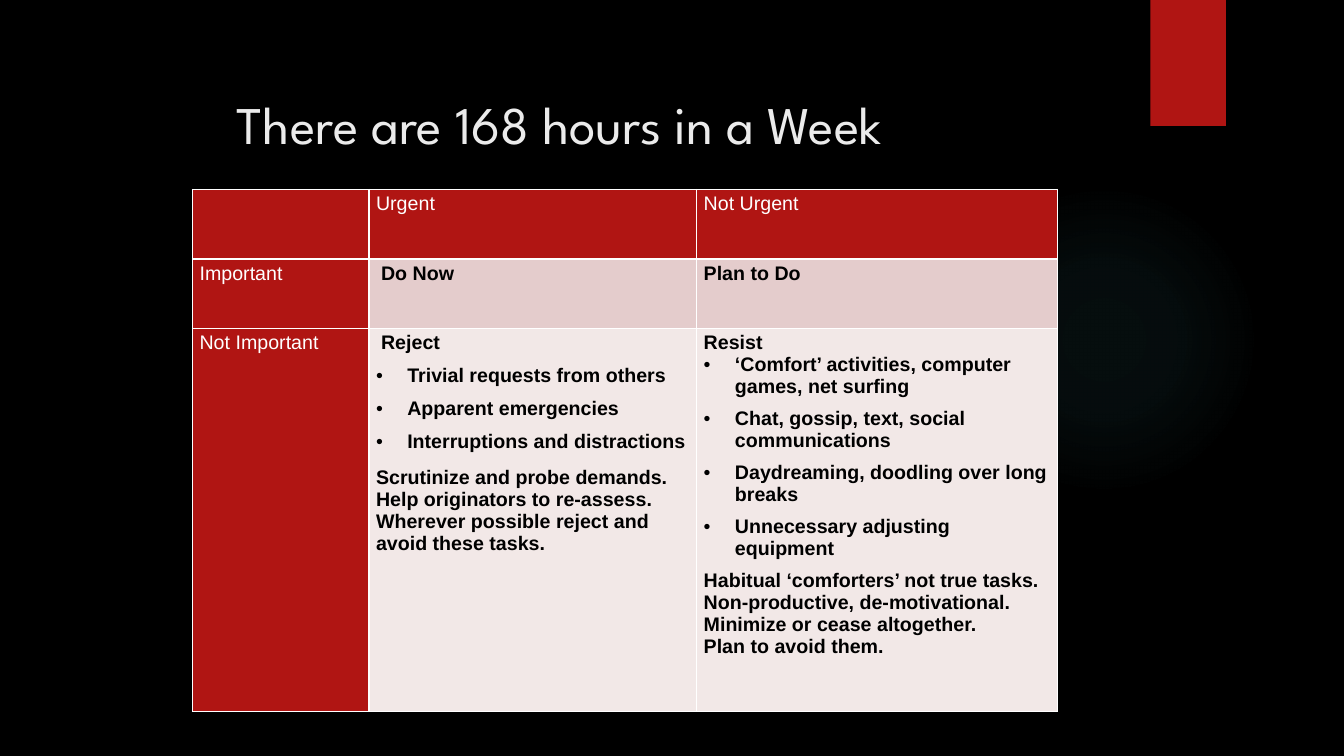
from lxml import etree
from pptx import Presentation
from pptx.dml.color import RGBColor
from pptx.enum.shapes import MSO_SHAPE
from pptx.enum.text import MSO_ANCHOR, PP_ALIGN
from pptx.oxml import parse_xml
from pptx.oxml.ns import qn
from pptx.util import Inches, Pt

OVAL, RECT = MSO_SHAPE.OVAL, MSO_SHAPE.RECTANGLE
MIDDLE, LEFT = MSO_ANCHOR.MIDDLE, PP_ALIGN.LEFT
NS = "http://schemas.openxmlformats.org/drawingml/2006/main"
COLORS = {
    "back": "000000", "red": "B01513", "glow": "50B9C1", "title": "EBEBEB",
    "white": "FFFFFF", "black": "000000", "rose": "E4CCCC", "pale": "F2E8E7",
}
GLOW = [(0, 7), (36, 6), (69, 0)]
COLS = [1.75, 3.25, 3.58]
ROWS = [0.69, 0.69, 3.8]


def plain(text, lead=1.0, gap=0, indent=0):
    return {"text": text, "lead": lead, "gap": gap, "indent": indent}


def bullet(text, lead=1.0, gap=0):
    return plain(text, lead, gap, 0.31) | {"bullet": True}


def head(text, indent=0):
    return [plain(text, 1.15, indent=indent)]


REJECT = head("Reject", 0.05) + [
    bullet("Trivial requests from others", 1.5),
    bullet("Apparent emergencies", 1.5),
    bullet("Interruptions and distractions", 1.5),
    plain("Scrutinize and probe demands. Help originators to re-assess. "
          "Wherever possible reject and avoid these tasks.", gap=10),
]
RESIST = head("Resist") + [
    bullet("‘Comfort’ activities, computer games, net surfing"),
    bullet("Chat, gossip, text, social communications", gap=7),
    bullet("Daydreaming, doodling over long breaks", gap=7),
    bullet("Unnecessary adjusting equipment", gap=7),
    plain("Habitual ‘comforters’ not true tasks. Non-productive, "
          "de-motivational. Minimize or cease altogether.", gap=7),
    plain("Plan to avoid them."),
]
GRID = [
    [[], head("Urgent"), head("Not Urgent")],
    [head("Important"), head("Do Now", 0.05), head("Plan to Do")],
    [head("Not Important"), REJECT, RESIST],
]


def color(name):
    return RGBColor.from_string(COLORS[name])


def add_block(slide, kind, left, top, width, height, fill):
    block = slide.shapes.add_shape(
        kind, Inches(left), Inches(top), Inches(width), Inches(height))
    block.shadow.inherit = False
    block.fill.solid()
    block.fill.fore_color.rgb = color(fill)
    block.line.fill.background()
    return block


def add_glow(slide):
    glow = add_block(slide, OVAL, 9.41, 1.83, 3.08, 3.08, "glow")
    stops = "".join(
        f'<a:gs pos="{pos * 1000}"><a:srgbClr val="{COLORS["glow"]}">'
        f'<a:alpha val="{alpha * 1000}"/></a:srgbClr></a:gs>'
        for pos, alpha in GLOW)
    grad = parse_xml(
        f'<a:gradFill xmlns:a="{NS}"><a:gsLst>{stops}</a:gsLst>'
        '<a:path path="circle"><a:fillToRect l="50000" t="50000" '
        'r="50000" b="50000"/></a:path></a:gradFill>')
    props = glow._element.spPr
    props.replace(props.find(qn("a:solidFill")), grad)


def set_title(slide, text):
    title = slide.shapes.title
    title.left, title.top = Inches(2.25), Inches(0.76)
    title.width, title.height = Inches(9), Inches(0.92)
    frame = title.text_frame
    frame.text = text
    frame.vertical_anchor = MIDDLE
    para = frame.paragraphs[0]
    para.alignment = LEFT
    font = para.runs[0].font
    font.size, font.name = Pt(37.8), "League Spartan"
    font.color.rgb = color("title")


def set_border(cell):
    props = cell._tc.get_or_add_tcPr()
    for spot, side in enumerate("LRTB"):
        props.insert(spot, parse_xml(
            f'<a:ln{side} xmlns:a="{NS}" w="12700"><a:solidFill>'
            f'<a:srgbClr val="{COLORS["white"]}"/>'
            f'</a:solidFill></a:ln{side}>'))


def style_para(para, item, ink, bold):
    props = para._p.get_or_add_pPr()
    props.set("marL", str(Inches(item["indent"])))
    if item.get("bullet"):
        props.set("indent", str(-Inches(item["indent"])))
        etree.SubElement(props, qn("a:buFont")).set("typeface", "Arial")
        etree.SubElement(props, qn("a:buChar")).set("char", "•")
    para.line_spacing = item["lead"]
    if item["gap"]:
        para.space_before = Pt(item["gap"])
    font = para.runs[0].font
    font.size, font.name, font.bold = Pt(14), "Arial", bold
    font.color.rgb = color(ink)


def fill_cell(cell, items, fill, ink, bold):
    cell.margin_left = cell.margin_right = Inches(0.07)
    cell.margin_top = cell.margin_bottom = 0
    cell.fill.solid()
    cell.fill.fore_color.rgb = color(fill)
    set_border(cell)
    if items:
        cell.text_frame.text = "\n".join(item["text"] for item in items)
        for para, item in zip(cell.text_frame.paragraphs, items):
            style_para(para, item, ink, bold)


def add_matrix(slide):
    table = slide.shapes.add_table(
        len(ROWS), len(COLS), Inches(1.91), Inches(1.88),
        Inches(sum(COLS)), Inches(sum(ROWS))).table
    for col, width in zip(table.columns, COLS):
        col.width = Inches(width)
    for row, height in zip(table.rows, ROWS):
        row.height = Inches(height)
    for r, line in enumerate(GRID):
        for c, items in enumerate(line):
            label = r == 0 or c == 0
            fill = "red" if label else ("rose", "pale")[r - 1]
            ink = "white" if label else "black"
            fill_cell(table.cell(r, c), items, fill, ink, not label)


def main():
    deck = Presentation()
    deck.slide_width, deck.slide_height = Inches(13.33), Inches(7.5)
    slide = deck.slides.add_slide(deck.slide_layouts[5])
    slide.background.fill.solid()
    slide.background.fill.fore_color.rgb = color("back")
    add_glow(slide)
    add_block(slide, RECT, 11.41, 0, 0.75, 1.25, "red")
    add_matrix(slide)
    set_title(slide, "There are 168 hours in a Week")
    deck.save("out.pptx")


if __name__ == "__main__":
    main()
